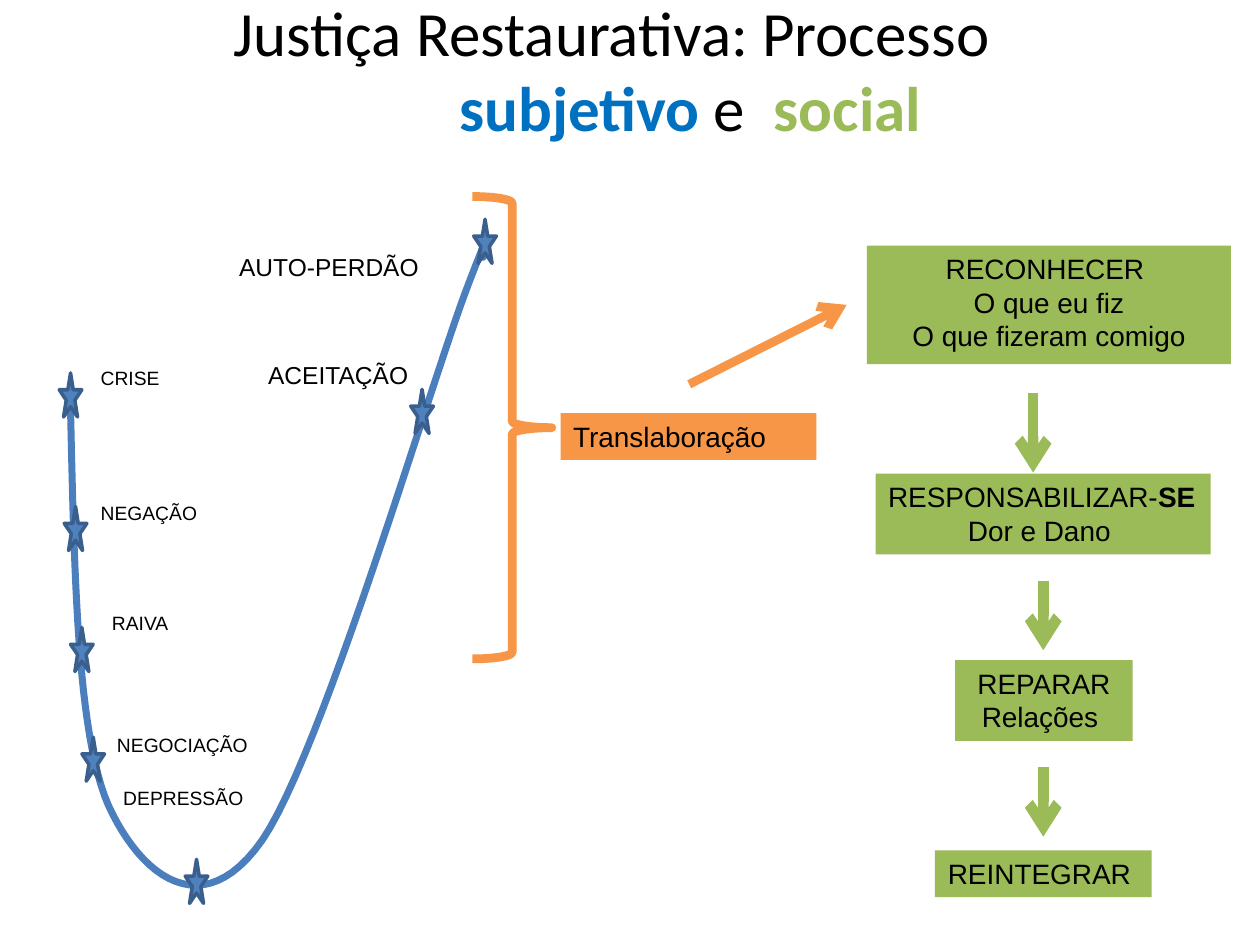
from lxml import etree
from pptx import Presentation
from pptx.dml.color import RGBColor
from pptx.enum.shapes import MSO_CONNECTOR, MSO_SHAPE
from pptx.enum.text import MSO_ANCHOR, PP_ALIGN as Align
from pptx.oxml.ns import qn
from pptx.util import Inches, Pt

BLACK = RGBColor(0x00, 0x00, 0x00)
BLUE = RGBColor(0x00, 0x70, 0xC0)
GREEN = RGBColor(0x9B, 0xBB, 0x59)
ORANGE = RGBColor(0xF7, 0x96, 0x46)
CURVE_BLUE = RGBColor(0x4B, 0x7E, 0xBC)
STAR_FILL = RGBColor(0x4F, 0x81, 0xBD)
STAR_LINE = RGBColor(0x3A, 0x5F, 0x8C)

prs = Presentation()
prs.slide_width, prs.slide_height = Inches(10), Inches(7.5)
slide = prs.slides.add_slide(prs.slide_layouts[6])
shapes = slide.shapes


def write(shape, lines, size, font="Arial", aligns=(Align.LEFT,), wrap=True, anchor=MSO_ANCHOR.TOP):
    """Fill a shape with lines of (text, colour, bold) runs; the last alignment repeats."""
    frame = shape.text_frame
    frame.word_wrap = wrap
    frame.vertical_anchor = anchor
    for i, runs in enumerate(lines):
        paragraph = frame.paragraphs[0] if i == 0 else frame.add_paragraph()
        paragraph.alignment = aligns[min(i, len(aligns) - 1)]
        for text, color, bold in runs:
            run = paragraph.add_run()
            run.text = text
            run.font.name, run.font.size = font, Pt(size)
            run.font.color.rgb, run.font.bold = color, bold


def add_arrow(start, end, color, width):
    arrow = shapes.add_connector(MSO_CONNECTOR.STRAIGHT, *map(Inches, start + end))
    arrow.line.color.rgb, arrow.line.width = color, Pt(width)
    etree.SubElement(arrow.line._get_or_add_ln(), qn("a:tailEnd"), type="arrow")
    etree.SubElement(arrow._element.spPr, qn("a:effectLst"))


# Title, with each line shifted from the centre by a margin
title = shapes.add_textbox(Inches(0.23), 0, Inches(9.47), Inches(1.09))
write(title, [
    [("Justiça Restaurativa: Processo", BLACK, False)],
    [("subjetivo", BLUE, True), (" e  ", BLACK, False), ("social", GREEN, True)],
], 36, font="Calibri", aligns=(Align.CENTER,), anchor=MSO_ANCHOR.MIDDLE)
for paragraph, side, margin in zip(title.text_frame.paragraphs, ("marR", "marL"), (0.22, 1.25)):
    paragraph._p.get_or_add_pPr().set(side, str(Inches(margin)))

# Curve of the subjective process, sampled from Bézier segments
STEPS = 24
curve_start = (0.56, 3.25)
segments = [
    ((0.59, 4.53), (0.61, 5.82), (0.86, 6.39)),
    ((1.12, 6.96), (1.61, 7.34), (2.08, 6.67)),
    ((2.55, 5.99), (3.40, 3.11), (3.69, 2.33)),
    ((3.98, 1.56), (3.80, 2.13), (3.84, 2.03)),
]
points = [curve_start]
for c1, c2, end in segments:
    start = points[-1]
    for step in range(1, STEPS + 1):
        t = step / STEPS
        u = 1 - t
        points.append(tuple(
            u**3 * a + 3 * u**2 * t * b + 3 * u * t**2 * c + t**3 * d
            for a, b, c, d in zip(start, c1, c2, end)))
# Freeform vertices are rounded to whole units, so they are given in EMU
vertices = [(Inches(x), Inches(y)) for x, y in points]
builder = shapes.build_freeform(*vertices[0])
builder.add_line_segments(vertices[1:], close=False)
curve = builder.convert_to_shape()
curve.shadow.inherit = False
curve.fill.background()
curve.line.color.rgb, curve.line.width = CURVE_BLUE, Pt(4)

star_corners = [(3.76, 1.74), (0.47, 2.96), (0.51, 4.02), (0.56, 4.98),
                (3.26, 3.09), (1.47, 6.82), (0.65, 5.85)]
for left, top in star_corners:
    star = shapes.add_shape(MSO_SHAPE.STAR_5_POINT, Inches(left), Inches(top),
                            Inches(0.18), Inches(0.35))
    star.shadow.inherit = False
    star.fill.solid()
    star.fill.fore_color.rgb = STAR_FILL
    star.line.color.rgb, star.line.width = STAR_LINE, Pt(2)

stages = [
    ("CRISE", 0.70, 2.86, 0.68, 11),
    ("NEGAÇÃO", 0.70, 3.93, 1.32, 11),
    ("RAIVA", 0.79, 4.80, 1.13, 11),
    ("NEGOCIAÇÃO", 0.83, 5.77, 1.91, 11),
    ("DEPRESSÃO", 0.88, 6.19, 1.76, 11),
    ("AUTO-PERDÃO", 1.80, 1.95, 1.80, 14),
    ("ACEITAÇÃO", 2.03, 2.81, 1.64, 14),
]
for name, left, top, width, size in stages:
    height = 0.29 if size == 11 else 0.34
    label = shapes.add_textbox(Inches(left), Inches(top), Inches(width), Inches(height))
    write(label, [[(name, BLACK, False)]], size, wrap=name != "CRISE")

# Steps of the social process, and the working-through that leads to them
CENTERED = (Align.CENTER,)
steps = [
    ((6.88, 1.95, 2.89, 0.94), GREEN, CENTERED,
     [[("RECONHECER ", False)], [("O que eu fiz", False)], [("O que fizeram comigo", False)]]),
    ((6.95, 3.76, 2.66, 0.64), GREEN, (Align.LEFT, Align.CENTER),
     [[("RESPONSABILIZAR-", False), ("SE", True)], [("Dor e Dano ", False)]]),
    ((7.58, 5.24, 1.41, 0.64), GREEN, CENTERED,
     [[("REPARAR", False)], [("Relações ", False)]]),
    ((7.42, 6.75, 1.72, 0.37), GREEN, CENTERED, [[("REINTEGRAR ", False)]]),
    ((4.45, 3.28, 2.03, 0.37), ORANGE, (Align.LEFT,), [[("Translaboração", False)]]),
]
for box, color, aligns, lines in steps:
    step_box = shapes.add_shape(MSO_SHAPE.RECTANGLE, *map(Inches, box))
    step_box.shadow.inherit = False
    step_box.fill.solid()
    step_box.fill.fore_color.rgb = color
    step_box.line.fill.background()
    write(step_box, [[(text, BLACK, bold) for text, bold in runs] for runs in lines],
          16, aligns=aligns)

for x, top, bottom in [(8.2, 3.12, 3.75), (8.28, 4.61, 5.16), (8.28, 6.09, 6.64)]:
    add_arrow((x, top), (x, bottom), GREEN, 6)

brace = shapes.add_shape(MSO_SHAPE.RIGHT_BRACE, Inches(3.75), Inches(1.56),
                         Inches(0.63), Inches(3.67))
brace.shadow.inherit = False
brace.fill.background()
brace.line.color.rgb, brace.line.width = ORANGE, Pt(5)

add_arrow((5.47, 3.05), (6.72, 2.42), ORANGE, 5)

prs.save("out.pptx")
